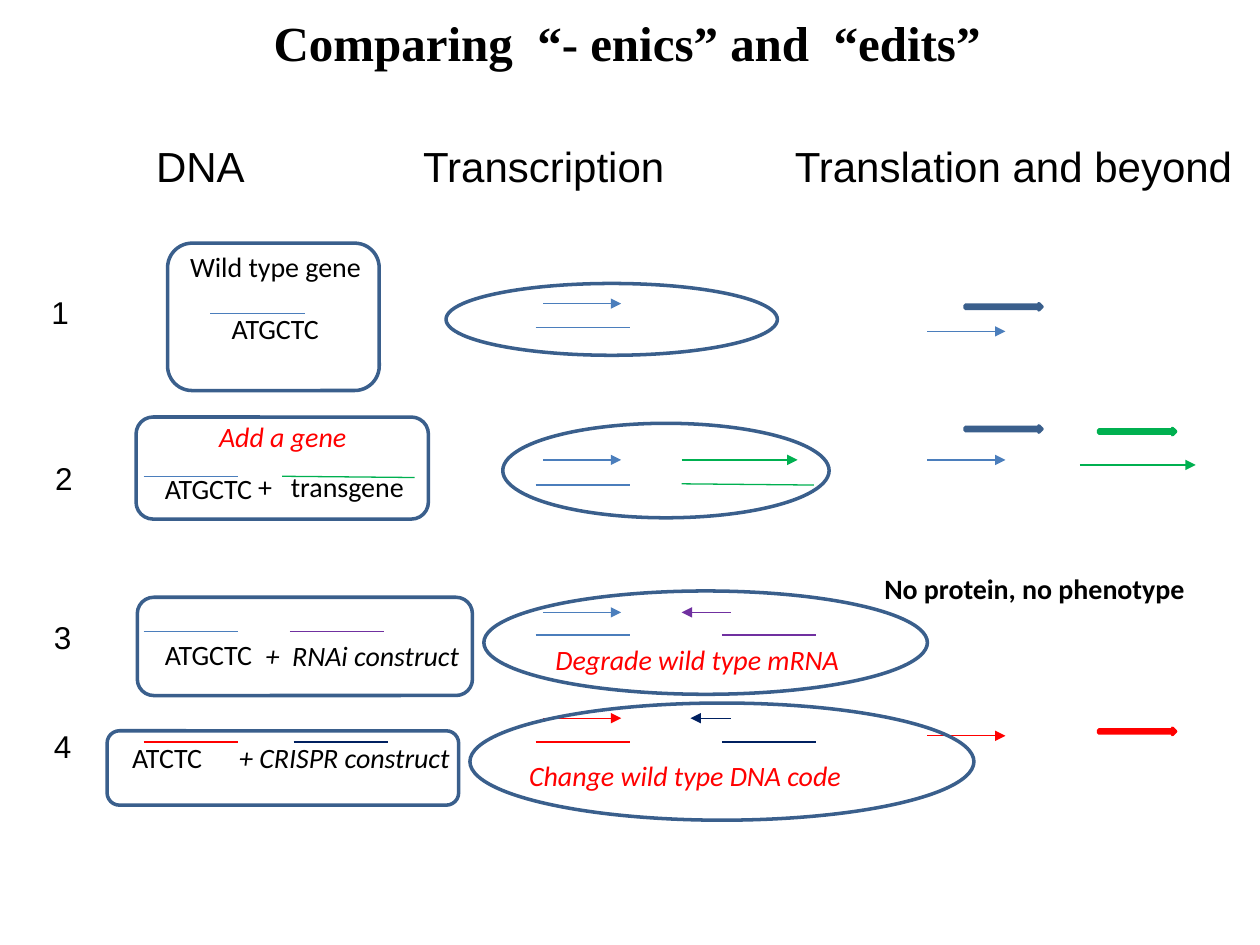
import pptx
import pptx.util
import pptx.dml.color
import pptx.enum.shapes
import pptx.enum.text
import pptx.oxml
from pptx.util import Inches

THEME = {
    "black": "000000", "outline": "3A5F8C", "wild": "4B7EBC", "protein": "4F81BD",
    "transgene": "00B050", "rnai": "7030A0", "crispr": "002060", "edited": "FF0000",
    "title": ("Times New Roman", 28), "heading": ("Arial", 24),
    "number": ("Arial", 18), "label": ("Calibri", 16),
    "thin": 0.75, "thick": 2,
}
TEXT_HEIGHT = {"heading": 0.5, "number": 0.4, "label": 0.37}
STRAND, MESSENGER, LONG_MESSENGER = 0.75, 0.62, 0.92
DNA_X, TRANSCRIPT_X, MESSENGER_X, TRANSLATED_X = 1.14, 4.25, 4.31, 7.36
PROTEIN_X, NEW_PROTEIN_X = 7.66, 8.72
PROTEIN_SIZE = (0.61, 0.05)

TITLE = "Comparing  “- enics” and  “edits” "

# text, left, width
HEADINGS = [("DNA", 1.14, 0.91), ("Transcription", 3.26, 2.23),
            ("Translation and beyond", 6.21, 3.9)]

# text, left, top
NUMBERS = [("1", 0.31, 2.28), ("2", 0.34, 3.59), ("3", 0.33, 4.86), ("4", 0.33, 5.72)]

# text, left, top, width, colour, style, wraps
LABELS = [
    ("Wild type gene", 1.41, 1.93, 1.68, "black", "", False),
    ("ATGCTC", 1.74, 2.42, 0.9, "black", "", False),
    ("Add a gene", 1.64, 3.28, 1.38, "edited", "italic", False),
    ("ATGCTC", 1.21, 3.69, 0.9, "black", "", False),
    ("+   transgene", 1.95, 3.68, 1.68, "black", "", True),
    ("ATGCTC", 1.21, 5.01, 0.9, "black", "", False),
    ("+  RNAi construct", 2.01, 5.02, 1.98, "black", "italic", True),
    ("Degrade wild type mRNA", 4.31, 5.05, 2.48, "edited", "italic", False),
    ("No protein, no phenotype", 6.92, 4.49, 2.67, "black", "bold", False),
    ("ATCTC", 0.95, 5.83, 0.76, "black", "", False),
    ("+ CRISPR construct", 1.8, 5.83, 1.98, "black", "italic", True),
    ("Change wild type DNA code", 4.1, 5.97, 2.81, "edited", "italic", False),
]

# left, top, horizontal run, vertical run, colour
STRANDS = [
    (1.67, 2.49, STRAND, 0, "wild"),
    (TRANSCRIPT_X, 2.6, STRAND, 0, "wild"),
    (DNA_X, 3.78, STRAND, 0, "wild"),
    (2.24, 3.78, 1.05, 0.01, "transgene"),
    (TRANSCRIPT_X, 3.85, STRAND, 0, "wild"),
    (5.41, 3.84, 1.05, 0.01, "transgene"),
    (DNA_X, 5.01, STRAND, 0, "wild"),
    (2.3, 5.01, STRAND, 0, "rnai"),
    (TRANSCRIPT_X, 5.04, STRAND, 0, "wild"),
    (5.73, 5.04, STRAND, 0, "rnai"),
    (DNA_X, 5.89, STRAND, 0, "edited"),
    (2.33, 5.89, STRAND, 0, "crispr"),
    (TRANSCRIPT_X, 5.89, STRAND, 0, "edited"),
    (5.73, 5.89, STRAND, 0, "crispr"),
]

# start, top, signed length, colour
MESSENGERS = [
    (MESSENGER_X, 2.41, MESSENGER, "wild"),
    (TRANSLATED_X, 2.63, MESSENGER, "wild"),
    (MESSENGER_X, 3.65, MESSENGER, "wild"),
    (5.41, 3.65, LONG_MESSENGER, "transgene"),
    (TRANSLATED_X, 3.65, MESSENGER, "wild"),
    (8.57, 3.69, LONG_MESSENGER, "transgene"),
    (MESSENGER_X, 4.86, MESSENGER, "wild"),
    (5.8, 4.86, -0.39, "rnai"),
    (MESSENGER_X, 5.7, MESSENGER, "edited"),
    (5.8, 5.7, -0.32, "crispr"),
    (TRANSLATED_X, 5.84, MESSENGER, "edited"),
]

# left, top, line colour
PROTEINS = [(PROTEIN_X, 2.41, "outline"), (PROTEIN_X, 3.38, "outline"),
            (NEW_PROTEIN_X, 3.4, "transgene"), (NEW_PROTEIN_X, 5.78, "edited")]

# left, top, width, height
GENE_FRAMES = [(1.33, 1.93, 1.68, 1.17), (1.08, 3.31, 2.32, 0.81),
               (1.09, 4.74, 2.66, 0.78), (0.85, 5.8, 2.79, 0.59)]
TRANSCRIPT_FRAMES = [(3.54, 2.25, 2.63, 0.57), (3.99, 3.36, 2.59, 0.75),
                     (3.84, 4.69, 3.52, 0.82), (3.73, 5.58, 4, 0.93)]


def color(name):
    return pptx.dml.color.RGBColor.from_string(THEME[name])


def write(para, text, role, ink="black", style=""):
    span = para.add_run()
    span.text = text
    name, size = THEME[role]
    span.font.name = name
    span.font.size = pptx.util.Pt(size)
    span.font.color.rgb = color(ink)
    span.font.bold = style == "bold"
    span.font.italic = style == "italic"


def add_title(page):
    box = page.shapes.title
    box.left, box.top, box.width, box.height = map(Inches, (1.98, 0, 6.09, 1.18))
    frame = box.text_frame
    frame.vertical_anchor = pptx.enum.text.MSO_ANCHOR.TOP
    frame.margin_top = Inches(0.1)
    para = frame.paragraphs[0]
    para.alignment = pptx.enum.text.PP_ALIGN.CENTER
    write(para, TITLE, "title", style="bold")


def add_text(page, text, left, top, width, role, ink="black", style="", wraps=False):
    box = page.shapes.add_textbox(*map(Inches, (left, top, width, TEXT_HEIGHT[role])))
    box.text_frame.word_wrap = wraps
    box.text_frame.auto_size = pptx.enum.text.MSO_AUTO_SIZE.SHAPE_TO_FIT_TEXT
    write(box.text_frame.paragraphs[0], text, role, ink, style)


def add_line(page, left, top, run, rise, ink, arrow=False):
    line = page.shapes.add_connector(
        pptx.enum.shapes.MSO_CONNECTOR.STRAIGHT,
        *map(Inches, (left, top, left + run, top + rise)))
    line.line.color.rgb = color(ink)
    line.line.width = pptx.util.Pt(THEME["thin"])
    properties = line._element.spPr
    if arrow:
        outline = line.line._get_or_add_ln()
        head = pptx.oxml.xmlchemy.OxmlElement("a:tailEnd")
        head.set("type", "triangle")
        outline.append(head)
    properties.append(pptx.oxml.xmlchemy.OxmlElement("a:effectLst"))


def add_outline(page, kind, area, ink="outline", fill=None):
    shape = page.shapes.add_shape(kind, *map(Inches, area))
    shape.shadow.inherit = False
    if fill:
        shape.fill.solid()
        shape.fill.fore_color.rgb = color(fill)
    else:
        shape.fill.background()
    shape.line.color.rgb = color(ink)
    shape.line.width = pptx.util.Pt(THEME["thick"])


def main():
    kinds = pptx.enum.shapes.MSO_SHAPE
    deck = pptx.Presentation()
    deck.slide_width, deck.slide_height = Inches(10), Inches(7.5)
    page = deck.slides.add_slide(deck.slide_layouts[5])
    add_title(page)
    for strand in STRANDS:
        add_line(page, *strand)
    for left, top, run, ink in MESSENGERS:
        add_line(page, left, top, run, 0, ink, arrow=True)
    for left, top, ink in PROTEINS:
        add_outline(page, kinds.RIGHT_ARROW, (left, top, *PROTEIN_SIZE), ink, "protein")
    for text, left, width in HEADINGS:
        add_text(page, text, left, 1.07, width, "heading")
    for text, left, top in NUMBERS:
        add_text(page, text, left, top, 0.34, "number")
    for text, left, top, width, ink, style, wraps in LABELS:
        add_text(page, text, left, top, width, "label", ink, style, wraps)
    for area in TRANSCRIPT_FRAMES:
        add_outline(page, kinds.OVAL, area)
    for area in GENE_FRAMES:
        add_outline(page, kinds.ROUNDED_RECTANGLE, area)
    deck.save("out.pptx")


if __name__ == "__main__":
    main()
